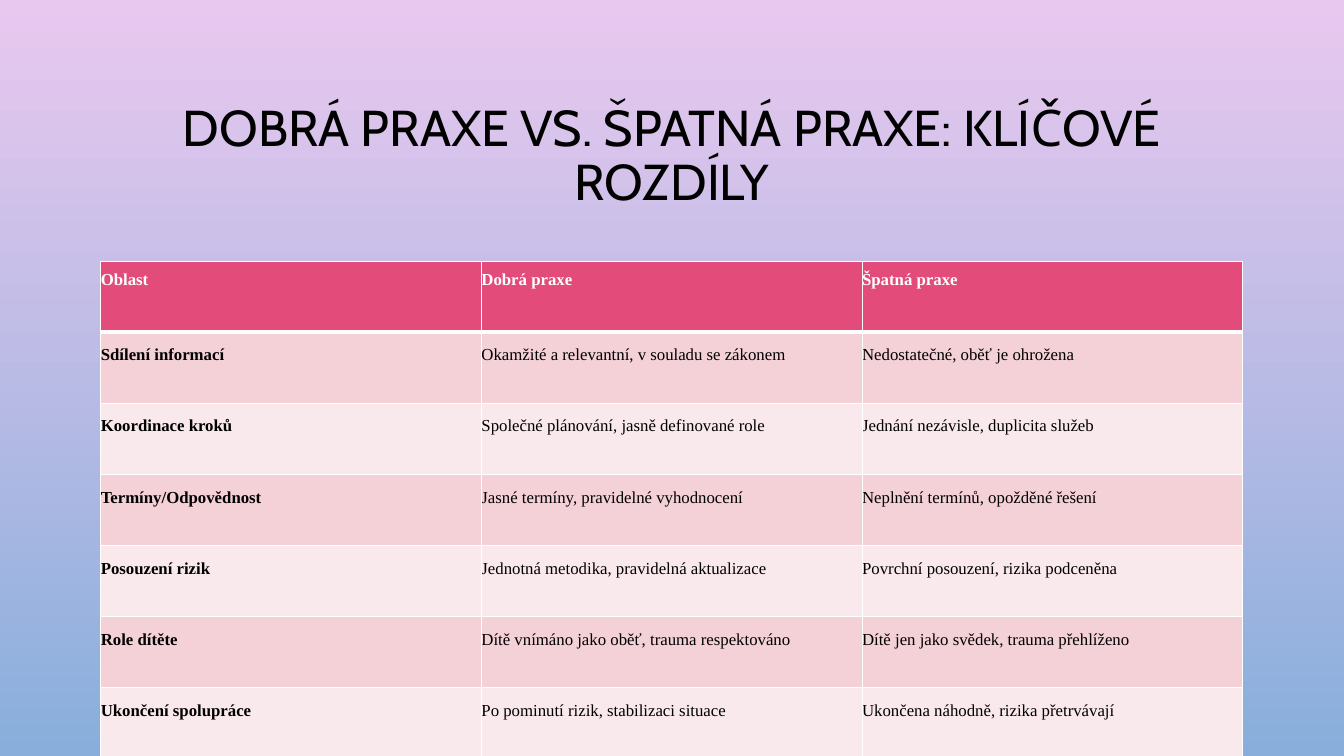
from dataclasses import dataclass

from lxml import etree
from pptx import Presentation
from pptx.dml.color import RGBColor
from pptx.enum.text import MSO_ANCHOR, MSO_AUTO_SIZE, PP_ALIGN
from pptx.oxml.ns import qn
from pptx.util import Cm, Pt

MIDDLE = MSO_ANCHOR.MIDDLE
TOP = MSO_ANCHOR.TOP
NO_AUTOFIT = MSO_AUTO_SIZE.NONE
CENTER = PP_ALIGN.CENTER
LEFT = PP_ALIGN.LEFT


@dataclass(frozen=True)
class Theme:
    sky_top: str = "E9C8EF"
    sky_bottom: str = "89AEDB"
    header: str = "E34B7A"
    bands: tuple = ("F4D0D7", "FAE9EC")
    ink: str = "000000"
    white: str = "FFFFFF"
    title_font: str = "Cabin"
    table_font: str = "Times New Roman"
    title_size: int = 36
    table_size: int = 12
    thin: int = 1
    thick: int = 3


@dataclass(frozen=True)
class Box:
    left: float
    top: float
    width: float
    height: float


THEME = Theme()
TITLE = "DOBRÁ PRAXE VS. ŠPATNÁ PRAXE: KLÍČOVÉ ROZDÍLY"
ROWS = [
    ("Oblast", "Dobrá praxe", "Špatná praxe"),
    ("Sdílení informací", "Okamžité a relevantní, v souladu se zákonem",
     "Nedostatečné, oběť je ohrožena"),
    ("Koordinace kroků", "Společné plánování, jasně definované role",
     "Jednání nezávisle, duplicita služeb"),
    ("Termíny/Odpovědnost", "Jasné termíny, pravidelné vyhodnocení",
     "Neplnění termínů, opožděné řešení"),
    ("Posouzení rizik", "Jednotná metodika, pravidelná aktualizace",
     "Povrchní posouzení, rizika podceněna"),
    ("Role dítěte", "Dítě vnímáno jako oběť, trauma respektováno",
     "Dítě jen jako svědek, trauma přehlíženo"),
    ("Ukončení spolupráce", "Po pominutí rizik, stabilizaci situace",
     "Ukončena náhodně, rizika přetrvávají"),
]


def add_span(para, text, font, size, color, bold=False):
    span = para.add_run()
    span.text = text
    span.font.name = font
    span.font.size = Pt(size)
    span.font.bold = bold
    span.font.color.rgb = RGBColor.from_string(color)


def paint_background(page):
    fill = page.background.fill
    fill.gradient()
    fill.gradient_angle = 270
    colors = (THEME.sky_top, THEME.sky_bottom)
    for stop, color, position in zip(fill.gradient_stops, colors, (0, 1)):
        stop.color.rgb = RGBColor.from_string(color)
        stop.position = position


def place_title(page, box):
    title = page.shapes.title
    title.left, title.top = Cm(box.left), Cm(box.top)
    title.width, title.height = Cm(box.width), Cm(box.height)
    frame = title.text_frame
    frame.word_wrap = True
    frame.auto_size = NO_AUTOFIT
    frame.vertical_anchor = MIDDLE
    para = frame.paragraphs[0]
    para.alignment = CENTER
    para.line_spacing = 0.9
    add_span(para, TITLE, THEME.title_font, THEME.title_size, THEME.ink)


def draw_borders(cell, top, bottom):
    properties = cell._tc.get_or_add_tcPr()
    widths = {"a:lnL": THEME.thin, "a:lnR": THEME.thin, "a:lnT": top, "a:lnB": bottom}
    for tag, width in widths.items():
        line = etree.SubElement(properties, qn(tag), w=str(Pt(width)))
        fill = etree.SubElement(line, qn("a:solidFill"))
        etree.SubElement(fill, qn("a:srgbClr"), val=THEME.white)


def fill_cell(cell, text, row, column, last_column):
    is_header = row == 0
    draw_borders(cell, THEME.thick if row == 1 else THEME.thin,
                 THEME.thick if is_header else THEME.thin)
    background = THEME.header if is_header else THEME.bands[(row - 1) % 2]
    cell.fill.solid()
    cell.fill.fore_color.rgb = RGBColor.from_string(background)
    cell.margin_left = Cm(0)
    cell.margin_right = Cm(0 if column == last_column else 0.42)
    cell.margin_top = cell.margin_bottom = Cm(0.21 if is_header else 0.31)
    cell.vertical_anchor = TOP
    para = cell.text_frame.paragraphs[0]
    para.alignment = LEFT
    para.line_spacing = 1.07
    para.space_after = Pt(8)
    add_span(para, text, THEME.table_font, THEME.table_size,
             THEME.white if is_header else THEME.ink, is_header or column == 0)


def place_table(page, box):
    columns = len(ROWS[0])
    table = page.shapes.add_table(len(ROWS), columns, Cm(box.left), Cm(box.top),
                                  Cm(box.width), Cm(box.height)).table
    for column in table.columns:
        column.width = Cm(box.width / columns)
    for row in table.rows:
        row.height = Cm(box.height / len(ROWS))
    for row, texts in enumerate(ROWS):
        for column, text in enumerate(texts):
            fill_cell(table.cell(row, column), text, row, column, columns - 1)


def main():
    deck = Presentation()
    deck.slide_width, deck.slide_height = Cm(33.87), Cm(19.05)
    page = deck.slides.add_slide(deck.slide_layouts[5])
    paint_background(page)
    place_title(page, Box(2.54, 1.73, 28.78, 4.45))
    place_table(page, Box(2.54, 6.58, 28.78, 12.55))
    deck.save("out.pptx")


if __name__ == "__main__":
    main()
